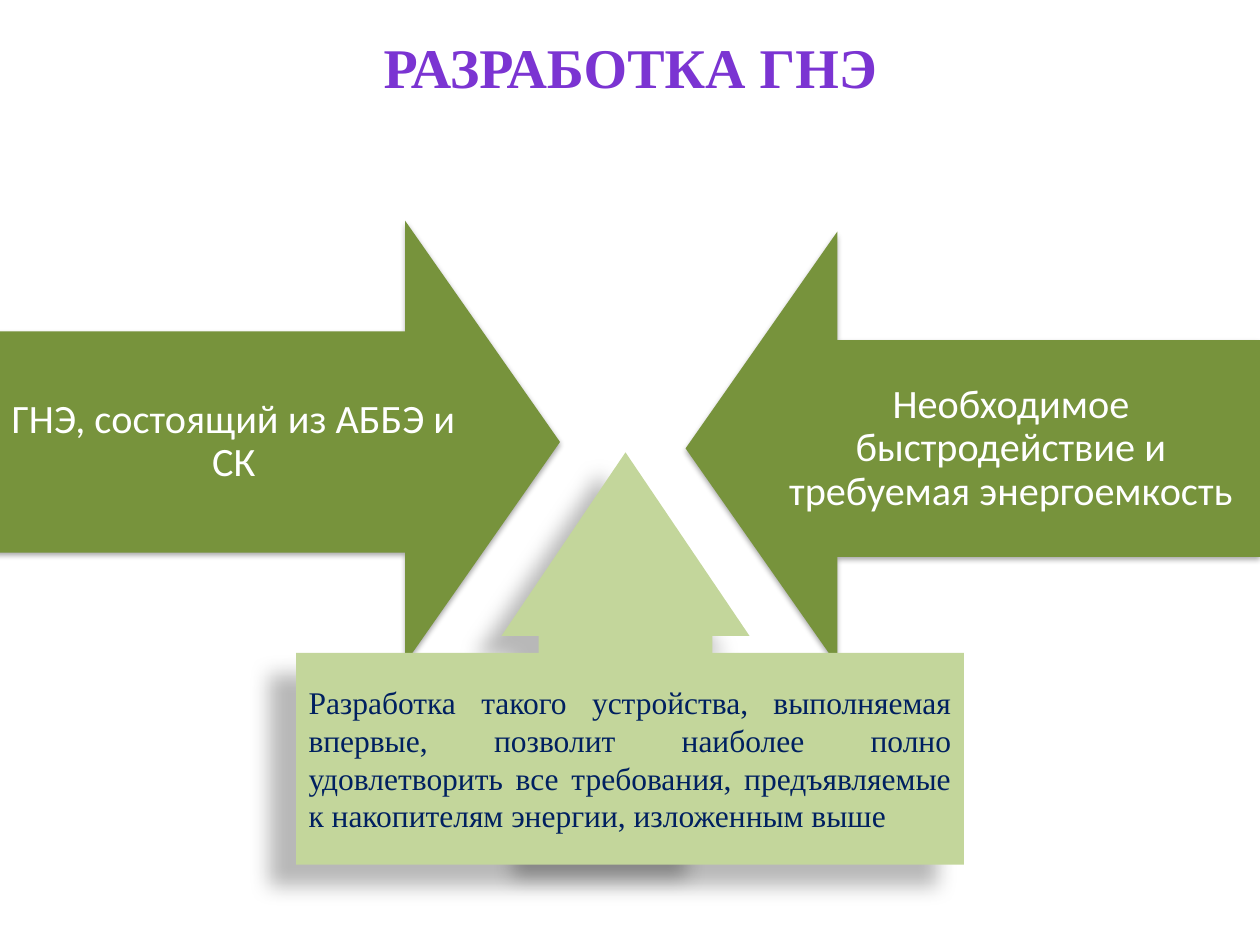
"""Build the slide on developing the hybrid energy storage (ГНЭ)."""
from dataclasses import dataclass

from lxml.etree import SubElement
from pptx import Presentation
from pptx.dml.color import RGBColor
from pptx.enum.shapes import MSO_SHAPE as Shape
from pptx.enum.text import MSO_ANCHOR as Anchor, MSO_AUTO_SIZE as AutoSize, PP_ALIGN as Align
from pptx.oxml.ns import qn
from pptx.util import Cm, Pt

COLORS = {
    "title": "7B34D2",
    "arrow": "77933C",
    "solution": "C3D69B",
    "solution_text": "002060",
    "label": "FFFFFF",
    "shadow": "000000",
}
SERIF, SANS = "Times New Roman", "Calibri"


@dataclass(frozen=True)
class Box:
    left: float
    top: float
    width: float
    height: float

    def lengths(self) -> tuple:
        return Cm(self.left), Cm(self.top), Cm(self.width), Cm(self.height)


@dataclass(frozen=True)
class Shadow:
    opacity: int
    blur: float
    distance: float
    angle: int


@dataclass(frozen=True)
class TextStyle:
    font: str
    size: int
    color: str
    align: Align = Align.CENTER
    bold: bool = False


@dataclass(frozen=True)
class Requirement:
    arrow: Box
    rotation: int
    label: Box
    text: str


SOFT = Shadow(35, 3.1, 1.8, 90)
DEEP = Shadow(28, 11.8, 19.7, 141)
TITLE_STYLE = TextStyle(SERIF, 32, "title", bold=True)
LABEL_STYLE = TextStyle(SANS, 23, "label")
SOLUTION_STYLE = TextStyle(SERIF, 18, "solution_text", Align.JUSTIFY)

REQUIREMENTS = (
    Requirement(Box(1.04, 3.12, 8.92, 11.58), 270, Box(-0.3, 6.68, 10.03, 4.45),
                "ГНЭ, состоящий из АББЭ и СК"),
    Requirement(Box(15.24, 3.25, 8.74, 11.58), 90, Box(15.37, 6.86, 10.03, 4.37),
                "Необходимое быстродействие и требуемая энергоемкость"),
)
SOLUTION = ("Разработка такого устройства, выполняемая впервые, позволит наиболее полно "
            "удовлетворить все требования, предъявляемые к накопителям энергии, "
            "изложенным выше")


def write(frame, text: str, style: TextStyle, anchor: Anchor = Anchor.MIDDLE):
    """Write one styled paragraph and return it."""
    frame.word_wrap = True
    frame.auto_size = AutoSize.NONE
    frame.vertical_anchor = anchor
    paragraph = frame.paragraphs[0]
    paragraph.alignment = style.align
    run = paragraph.add_run()
    run.text = text
    run.font.name = style.font
    run.font.size = Pt(style.size)
    run.font.bold = style.bold
    run.font.color.rgb = RGBColor.from_string(COLORS[style.color])
    return paragraph


def add_figure(slide, kind: Shape, box: Box, color: str, shadow: Shadow,
               adjustments: tuple = (), rotation: int = 0):
    """Draw a borderless shape with an outer shadow."""
    figure = slide.shapes.add_shape(kind, *box.lengths())
    figure.rotation = rotation
    for index, value in enumerate(adjustments):
        figure.adjustments[index] = value
    figure.fill.solid()
    figure.fill.fore_color.rgb = RGBColor.from_string(COLORS[color])
    figure.line.fill.background()
    figure.shadow.inherit = False
    effects = figure.element.spPr.find(qn("a:effectLst"))
    outer = SubElement(effects, qn("a:outerShdw"), blurRad=str(Pt(shadow.blur)),
                       dist=str(Pt(shadow.distance)), dir=str(shadow.angle * 60000),
                       rotWithShape="0")
    tint = SubElement(outer, qn("a:srgbClr"), val=COLORS["shadow"])
    SubElement(tint, qn("a:alpha"), val=str(shadow.opacity * 1000))
    return figure


def add_requirement(slide, requirement: Requirement) -> None:
    """Draw a side arrow with its label."""
    add_figure(slide, Shape.DOWN_ARROW, requirement.arrow, "arrow", SOFT,
               (0.5, 0.35), requirement.rotation)
    frame = slide.shapes.add_textbox(*requirement.label.lengths()).text_frame
    frame.margin_left = frame.margin_right = Cm(0.45)
    frame.margin_top = frame.margin_bottom = Cm(0.45)
    write(frame, requirement.text, LABEL_STYLE).line_spacing = 0.9


def main() -> None:
    """Assemble and save the slide."""
    deck = Presentation()
    deck.slide_width, deck.slide_height = Cm(25.4), Cm(19.05)
    slide = deck.slides.add_slide(deck.slide_layouts[5])

    title = slide.shapes.title
    title.left, title.top, title.width, title.height = Box(0.71, 0.53, 24, 1.63).lengths()
    write(title.text_frame, "РАЗРАБОТКА ГНЭ", TITLE_STYLE, Anchor.TOP)

    for requirement in REQUIREMENTS:
        add_requirement(slide, requirement)

    add_figure(slide, Shape.UP_ARROW, Box(10.11, 9.12, 5, 8.13), "solution", DEEP, (0.7, 0.74))
    solution = add_figure(slide, Shape.RECTANGLE, Box(5.97, 13.16, 13.46, 4.27), "solution", DEEP)
    write(solution.text_frame, SOLUTION, SOLUTION_STYLE)

    deck.save("out.pptx")


if __name__ == "__main__":
    main()
